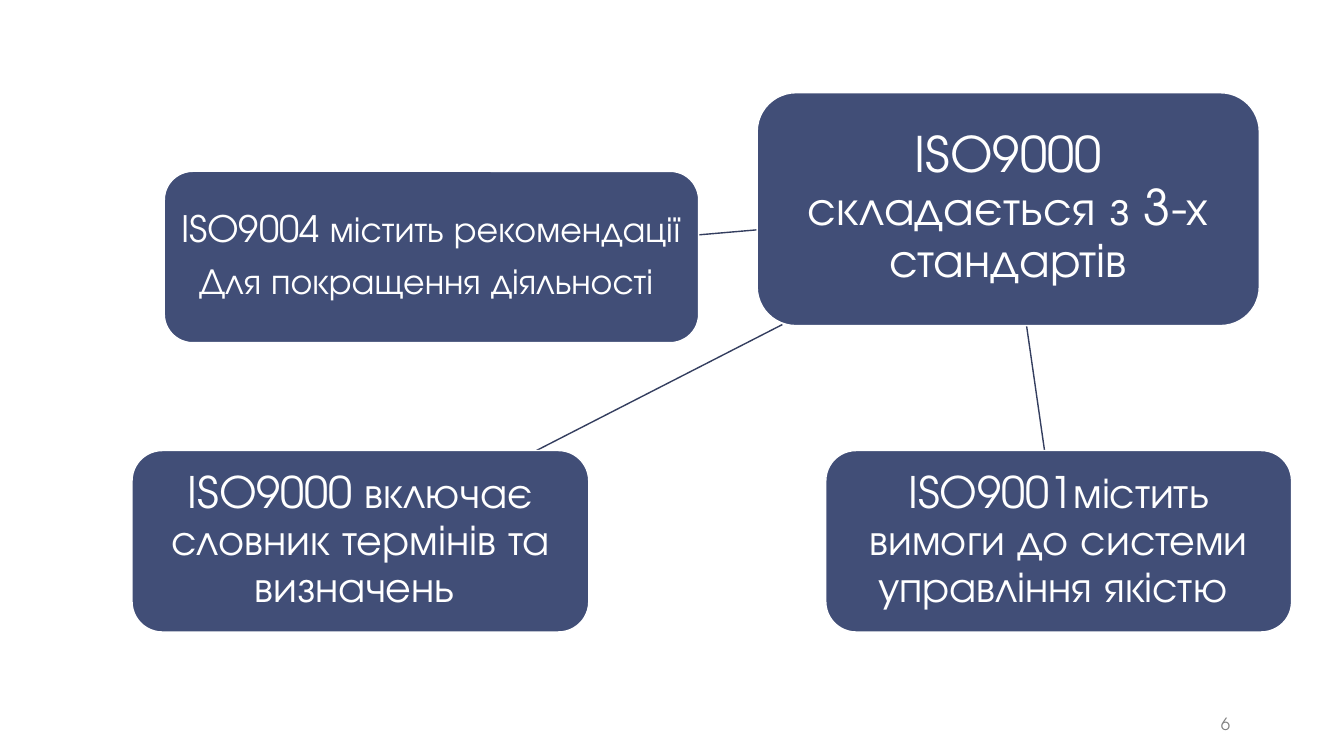
"""Slide on the three standards of the ISO 9000 family."""
from lxml import etree
from pptx import Presentation
from pptx.dml.color import RGBColor
from pptx.enum.shapes import MSO_CONNECTOR, MSO_SHAPE
from pptx.enum.text import MSO_ANCHOR, PP_ALIGN
from pptx.oxml.ns import qn
from pptx.util import Inches, Pt

ROUND = MSO_SHAPE.ROUNDED_RECTANGLE
STRAIGHT = MSO_CONNECTOR.STRAIGHT
MIDDLE, BOTTOM = MSO_ANCHOR.MIDDLE, MSO_ANCHOR.BOTTOM
CENTER, RIGHT = PP_ALIGN.CENTER, PP_ALIGN.RIGHT
WHITE = RGBColor(0xFF, 0xFF, 0xFF)
NAVY = RGBColor(0x41, 0x4E, 0x77)
DARK = RGBColor(0x34, 0x3E, 0x5F)
GRAY = RGBColor(0x80, 0x80, 0x80)
FONT = "TeX Gyre Adventor"


def write(frame, lines, size, color=WHITE, align=CENTER, anchor=MIDDLE,
          pads=(0.1, 0.1), lead=0.9, after=0.35):
    frame.word_wrap = True
    frame.vertical_anchor = anchor
    frame.margin_left = frame.margin_right = Inches(pads[0])
    frame.margin_top = frame.margin_bottom = Inches(pads[1])
    for i, line in enumerate(lines):
        para = frame.add_paragraph() if i else frame.paragraphs[0]
        para.alignment = align
        para.line_spacing = lead
        para.space_after = Pt(round(size * after))
        run = para.add_run()
        run.text = line
        run.font.name = FONT
        run.font.size = Pt(size)
        run.font.color.rgb = color


class Board:
    def __init__(self, slide):
        self.shapes = slide.shapes

    def card(self, area, lines, size, pad):
        box = self.shapes.add_shape(ROUND, *map(Inches, area))
        box.shadow.inherit = False
        box.fill.solid()
        box.fill.fore_color.rgb = NAVY
        box.line.color.rgb = WHITE
        box.line.width = Pt(1)
        write(box.text_frame, lines, size, pads=(pad, pad))

    def link(self, *ends):
        line = self.shapes.add_connector(STRAIGHT, *map(Inches, ends))
        line.line.color.rgb = DARK
        line.line.width = Pt(1)
        etree.SubElement(line._element.spPr, qn("a:effectLst"))

    def label(self, area, text, size, **style):
        box = self.shapes.add_textbox(*map(Inches, area))
        write(box.text_frame, [text], size, **style)


def main():
    deck = Presentation()
    deck.slide_width, deck.slide_height = Inches(13.33), Inches(7.5)
    board = Board(deck.slides.add_slide(deck.slide_layouts[6]))

    for ends in ((7.51, 2.28, 6.93, 2.33),
                 (10.18, 3.22, 10.36, 4.47),
                 (7.76, 3.22, 5.32, 4.47)):
        board.link(*ends)

    cards = (
        ((7.51, 0.92, 4.98, 2.31),
         ["ISO9000 складається з 3-х стандартів"], 35, 0.1),
        ((1.63, 1.7, 5.3, 1.7),
         ["ISO9004 містить рекомендації", "Для покращення діяльності "],
         26, 0.07),
        ((8.19, 4.47, 4.62, 1.8),
         ["ISO9001містить вимоги до системи управління якістю "], 31, 0.09),
        ((1.31, 4.47, 4.53, 1.8),
         ["ISO9000 включає словник термінів та визначень "], 31, 0.09),
    )
    for card in cards:
        board.card(*card)

    board.label((11.12, 7, 1.21, 0.35), "6", 12, color=GRAY, align=RIGHT,
                anchor=BOTTOM, pads=(0.13, 0.07), lead=1, after=0)
    deck.save("out.pptx")


if __name__ == "__main__":
    main()
